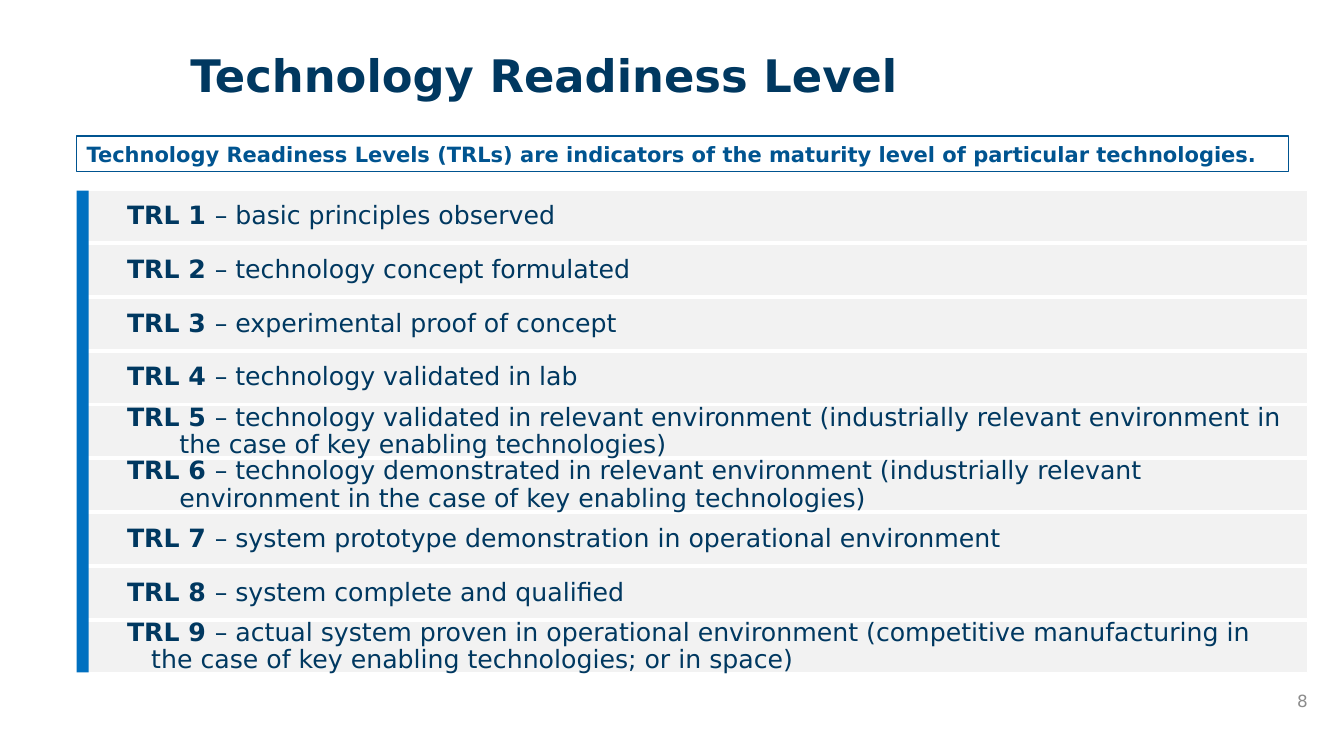
import pptx
import pptx.dml.color
import pptx.enum.shapes
import pptx.enum.text
import pptx.util

Inches = pptx.util.Inches
Pt = pptx.util.Pt
ANCHOR = pptx.enum.text.MSO_ANCHOR
ALIGN = pptx.enum.text.PP_ALIGN
RECTANGLE = pptx.enum.shapes.MSO_SHAPE.RECTANGLE
NAVY = "003860"
BLUE = "005490"


def paint(target, color):
    if hasattr(target, "solid"):
        target.solid()
        target = target.fore_color
    target.rgb = pptx.dml.color.RGBColor.from_string(color)


def add_span(para, text, size, color, bold=False):
    span = para.add_run()
    span.text = text
    span.font.name = "DejaVu Sans"
    span.font.size = Pt(size)
    span.font.bold = bold
    paint(span.font.color, color)


deck = pptx.Presentation()
deck.slide_width = Inches(13.33)
deck.slide_height = Inches(7.5)
page = deck.slides.add_slide(deck.slide_layouts[6])

# Title
title = page.shapes.add_textbox(Inches(1.79), Inches(0.48), Inches(9.34), Inches(1.13))
title.text_frame.word_wrap = True
para = title.text_frame.paragraphs[0]
para.line_spacing = 0.9
add_span(para, "Technology Readiness Level", 32, NAVY, True)

# Level rows: a line break marks where the description continues, indented by "hang"
levels = [
    ("basic principles observed", 0),
    ("technology concept formulated", 0),
    ("experimental proof of concept", 0),
    ("technology validated in lab", 0),
    ("technology validated in relevant environment (industrially relevant environment in\n"
     "the case of key enabling technologies)", 0.52),
    ("technology demonstrated in relevant environment (industrially relevant\n"
     "environment in the case of key enabling technologies)", 0.52),
    ("system prototype demonstration in operational environment", 0),
    ("system complete and qualified", 0),
    ("actual system proven in operational environment (competitive manufacturing in\n"
     "the case of key enabling technologies; or in space)", 0.24),
]
first_top, last_top = 1.89, 6.16
pitch = (last_top - first_top) / (len(levels) - 1)
for index, (description, hang) in enumerate(levels):
    row = page.shapes.add_shape(RECTANGLE, Inches(0.76), Inches(first_top + index * pitch),
                                Inches(12.21), Inches(0.51))
    row.shadow.inherit = False
    paint(row.fill, "F2F2F2")
    paint(row.line.color, "FFFFFF")
    row.line.width = Pt(1)
    frame = row.text_frame
    frame.word_wrap = True
    frame.vertical_anchor = ANCHOR.MIDDLE
    frame.margin_left = Inches(0.5)
    frame.margin_right = Inches(0.06)
    frame.margin_top = frame.margin_bottom = Inches(0.04)
    para = frame.paragraphs[0]
    para.alignment = ALIGN.LEFT
    para.line_spacing = 0.9
    para.space_after = Pt(6.3)
    indent = para._p.get_or_add_pPr()
    indent.set("marL", str(Inches(hang)))
    indent.set("indent", str(-Inches(hang)))
    add_span(para, f"TRL {index + 1} ", 18, NAVY, True)
    for number, line in enumerate(f"– {description}".split("\n")):
        if number:
            para.add_line_break()
        add_span(para, line, 18, NAVY)

# Definition box
definition = page.shapes.add_shape(RECTANGLE, Inches(0.76), Inches(1.35), Inches(12.02), Inches(0.35))
definition.shadow.inherit = False
definition.fill.background()
paint(definition.line.color, BLUE)
definition.line.width = Pt(1)
definition.text_frame.word_wrap = True
definition.text_frame.vertical_anchor = ANCHOR.TOP
para = definition.text_frame.paragraphs[0]
para.alignment = ALIGN.LEFT
add_span(para, "Technology Readiness Levels (TRLs) are indicators of the maturity level "
               "of particular technologies.", 15, BLUE, True)

# Accent bar beside the rows
bar = page.shapes.add_shape(RECTANGLE, Inches(0.76), Inches(first_top), Inches(0.12), Inches(4.78))
bar.shadow.inherit = False
paint(bar.fill, "0070C0")
bar.line.fill.background()

# Page number
folio = page.shapes.add_textbox(Inches(10.07), Inches(6.75), Inches(3), Inches(0.4))
folio.text_frame.word_wrap = True
folio.text_frame.vertical_anchor = ANCHOR.MIDDLE
para = folio.text_frame.paragraphs[0]
para.alignment = ALIGN.RIGHT
add_span(para, "8", 12, "8C8C8C")

deck.save("out.pptx")
